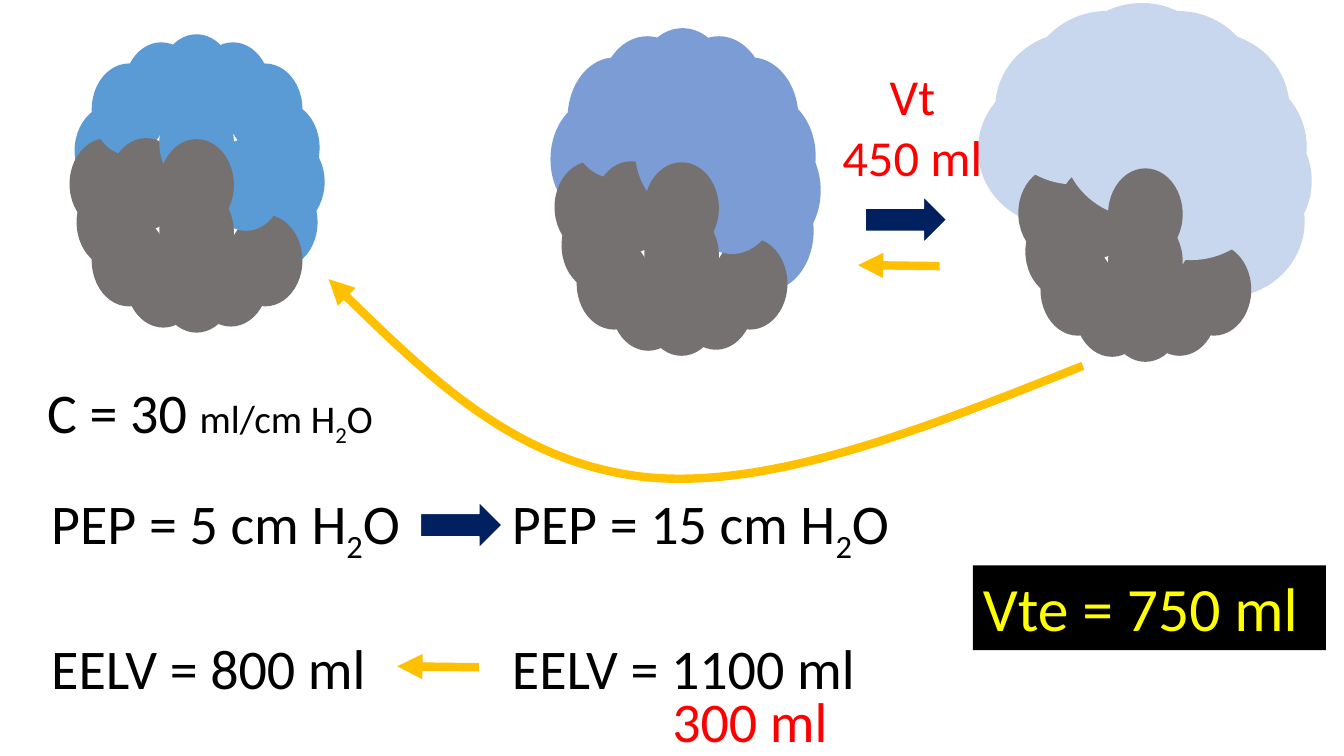
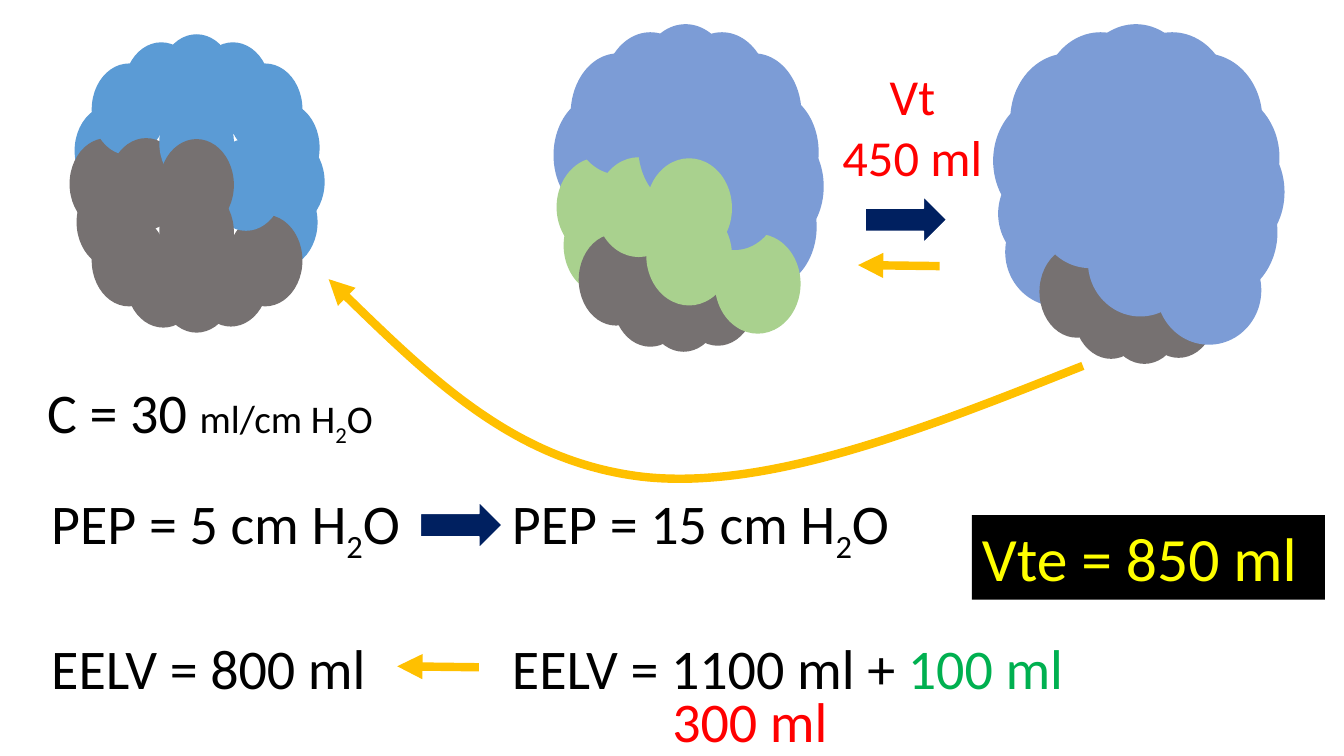
from dataclasses import dataclass

from lxml import etree
from pptx import Presentation
from pptx.dml.color import RGBColor
from pptx.enum.shapes import MSO_CONNECTOR, MSO_SHAPE
from pptx.enum.text import MSO_AUTO_SIZE, PP_ALIGN
from pptx.oxml.ns import qn
from pptx.util import Inches, Pt

ELLIPSE, RIGHT_ARROW = MSO_SHAPE.OVAL, MSO_SHAPE.RIGHT_ARROW
STRAIGHT = MSO_CONNECTOR.STRAIGHT
FIT_SHAPE = MSO_AUTO_SIZE.SHAPE_TO_FIT_TEXT
LEFT, CENTER = PP_ALIGN.LEFT, PP_ALIGN.CENTER


@dataclass(frozen=True)
class Theme:
    font: str = "Calibri"
    text: str = "000000"
    white: str = "FFFFFF"
    red: str = "FF0000"
    green: str = "00B050"
    navy: str = "002060"
    gold: str = "FFC000"
    yellow: str = "FFFF00"
    resting: str = "5B9BD5"
    inflated: str = "7C9CD6"
    overinflated: str = "C8D6EE"
    recruited: str = "A9D18E"
    collapsed: str = "767171"
    body: int = 40
    unit: int = 28
    volume: int = 36
    result: int = 44
    line_gap: int = 49
    arrow: int = 6


@dataclass(frozen=True)
class Zone:
    x: float
    y: float
    w: float
    h: float
    color: str


T = Theme()
SMALL = (0.74, 0.91)
MEDIUM = (0.94, 1.2)

ALVEOLI = [
    ("open", 1.25, 0.08), ("open", 0.54, 0.08), ("open", 1.72, 1.41),
    ("open", 1.74, 0.67), ("closed", 1.23, 1.99), ("unstable", 0.07, 1.41),
    ("closed", 0.56, 2), ("open", 0.05, 0.7), ("unstable", 0, 1.03),
    ("closed", 0.89, 2.05), ("open", 1.79, 1.01), ("open", 0.22, 0.29),
    ("open", 1.57, 0.29), ("closed", 0.22, 1.79), ("open", 0.89, 0),
    ("unstable", 1.57, 1.79), ("unstable", 0.39, 1.03), ("open", 1.38, 1.04),
    ("unstable", 0.89, 1.51), ("open", 0.89, 0.62), ("unstable", 0.89, 1.04),
]


def rgb(value):
    return RGBColor.from_string(value)


def add_lung(slide, open_zone, closed, unstable=None):
    zones = {"open": open_zone, "closed": closed, "unstable": unstable or closed}
    group = slide.shapes.add_group_shape()
    for kind, dx, dy in ALVEOLI:
        zone = zones[kind]
        sp = group.shapes.add_shape(
            ELLIPSE, Inches(zone.x + dx), Inches(zone.y + dy),
            Inches(zone.w), Inches(zone.h))
        sp.shadow.inherit = False
        sp.fill.solid()
        sp.fill.fore_color.rgb = rgb(zone.color)
        sp.line.fill.background()


def add_run(p, text, size, color=T.text, subscript=False):
    r = p.add_run()
    r.text = text
    r.font.name = T.font
    r.font.size = Pt(size)
    r.font.color.rgb = rgb(color)
    if subscript:
        r._r.get_or_add_rPr().set("baseline", "-25000")


def add_text(slide, box, paragraphs, align=LEFT, gap=0, fill=None):
    sp = slide.shapes.add_textbox(*map(Inches, box))
    if fill:
        sp.fill.solid()
        sp.fill.fore_color.rgb = rgb(fill)
    tf = sp.text_frame
    tf.word_wrap = True
    tf.auto_size = FIT_SHAPE
    for i, runs in enumerate(paragraphs):
        p = tf.add_paragraph() if i else tf.paragraphs[0]
        p.alignment = align
        if i and gap:
            p.space_before = Pt(gap)
        for run in runs:
            add_run(p, *run)


def water(text, size):
    return [(text + " H", size), ("2", size, T.text, True), ("O", size)]


def add_block_arrow(slide, x, y):
    sp = slide.shapes.add_shape(
        RIGHT_ARROW, Inches(x), Inches(y), Inches(0.81), Inches(0.46))
    sp.shadow.inherit = False
    sp.fill.solid()
    sp.fill.fore_color.rgb = rgb(T.navy)
    sp.line.color.rgb = rgb(T.white)
    sp.line.width = Pt(1)


def style_arrow(sp):
    sp.line.color.rgb = rgb(T.gold)
    sp.line.width = Pt(T.arrow)
    ln = sp.element.spPr.find(qn("a:ln"))
    etree.SubElement(ln, qn("a:tailEnd"), type="triangle")


def add_return_arrow(slide, x, y):
    sp = slide.shapes.add_connector(
        STRAIGHT, Inches(x + 0.81), Inches(y + 0.01), Inches(x), Inches(y))
    style_arrow(sp)
    etree.SubElement(sp.element.spPr, qn("a:effectLst"))


def add_exhalation_curve(slide, x, y):
    start = (7.48, 0.86)
    bends = [
        ((5.92, 1.48), (4.36, 2.1), (3.11, 1.96)),
        ((1.86, 1.81), (0.93, 0.91), (0, 0)),
    ]
    builder = slide.shapes.build_freeform(*map(Inches, start), scale=1.0)
    builder.add_line_segments(
        [tuple(map(Inches, bend[-1])) for bend in bends], close=False)
    sp = builder.convert_to_shape(Inches(x), Inches(y))
    for segment, bend in zip(list(sp.element.iter(qn("a:lnTo"))), bends):
        cubic = etree.Element(qn("a:cubicBezTo"))
        for px, py in bend:
            etree.SubElement(cubic, qn("a:pt"),
                             x=str(Inches(px)), y=str(Inches(py)))
        segment.getparent().replace(segment, cubic)
    sp.shadow.inherit = False
    sp.fill.background()
    style_arrow(sp)


def add_settings(slide, x, y, w, pressure, volume):
    add_text(slide, (x, y, w, 2.12),
             [water(f"PEP = {pressure} cm", T.body), volume], gap=T.line_gap)


def add_ventilation_slide(prs, lungs, raised_volume, result, result_box):
    slide = prs.slides.add_slide(prs.slide_layouts[6])
    resting = Zone(0.69, 0.34, *SMALL, T.resting)
    collapsed = Zone(0.69, 0.34, *SMALL, T.collapsed)
    for zones in [(resting, collapsed), *lungs]:
        add_lung(slide, *zones)

    add_text(slide, (0.37, 3.7, 4.88, 0.77),
             [[("C = 30 ", T.body), *water("ml/cm", T.unit)]])
    add_settings(slide, 0.41, 4.8, 4.88, 5, [("EELV = 800 ml", T.body)])
    add_settings(slide, 4.98, 4.8, 6.36, 15, raised_volume)
    add_text(slide, (8, 0.6, 2.1, 1.31),
             [[(text, T.volume, T.red)] for text in ("Vt", "450 ml")], CENTER)
    add_text(slide, (6.57, 6.76, 2.3, 0.77), [[("300 ml", T.body, T.red)]])
    add_text(slide, result_box, [[(result, T.result, T.yellow)]], fill=T.text)

    add_exhalation_curve(slide, 3.26, 2.77)
    for x, y in [(4.17, 4.98), (8.58, 1.95)]:
        add_block_arrow(slide, x, y)
    for x, y in [(3.94, 6.61), (8.51, 2.63)]:
        add_return_arrow(slide, x, y)


def main():
    prs = Presentation()
    prs.slide_width, prs.slide_height = Inches(13.33), Inches(7.5)

    add_ventilation_slide(
        prs,
        [
            (Zone(5.41, 0.28, *MEDIUM, T.inflated),
             Zone(5.5, 0.57, *SMALL, T.collapsed)),
            (Zone(9.65, 0.03, 1.57, 1.51, T.overinflated),
             Zone(10.1, 0.63, *SMALL, T.collapsed)),
        ],
        [("EELV = 1100 ml", T.body)],
        "Vte = 750 ml", (9.65, 5.61, 3.5, 0.84))

    add_ventilation_slide(
        prs,
        [
            (Zone(5.44, 0.24, *MEDIUM, T.inflated),
             Zone(5.52, 0.53, *SMALL, T.collapsed),
             Zone(5.52, 0.53, 0.85, 0.99, T.recruited)),
            (Zone(9.8, 0.24, 1.15, 1.31, T.inflated),
             Zone(10.09, 0.65, *SMALL, T.collapsed),
             Zone(9.9, 0.55, 1.04, 1.08, T.inflated)),
        ],
        [("EELV = 1100 ml + ", T.body), ("100 ml", T.body, T.green)],
        "Vte = 850 ml", (9.64, 5.11, 3.5, 0.84))

    prs.save("out.pptx")


if __name__ == "__main__":
    main()
